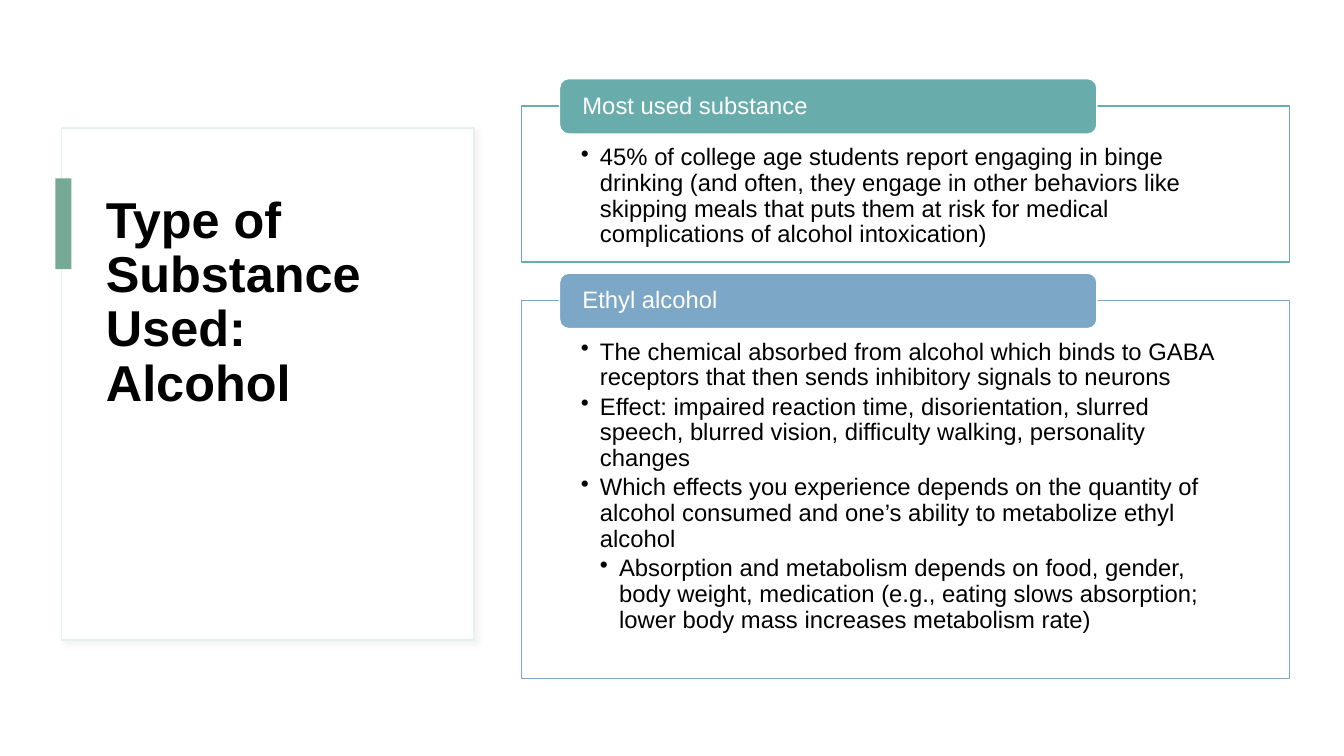
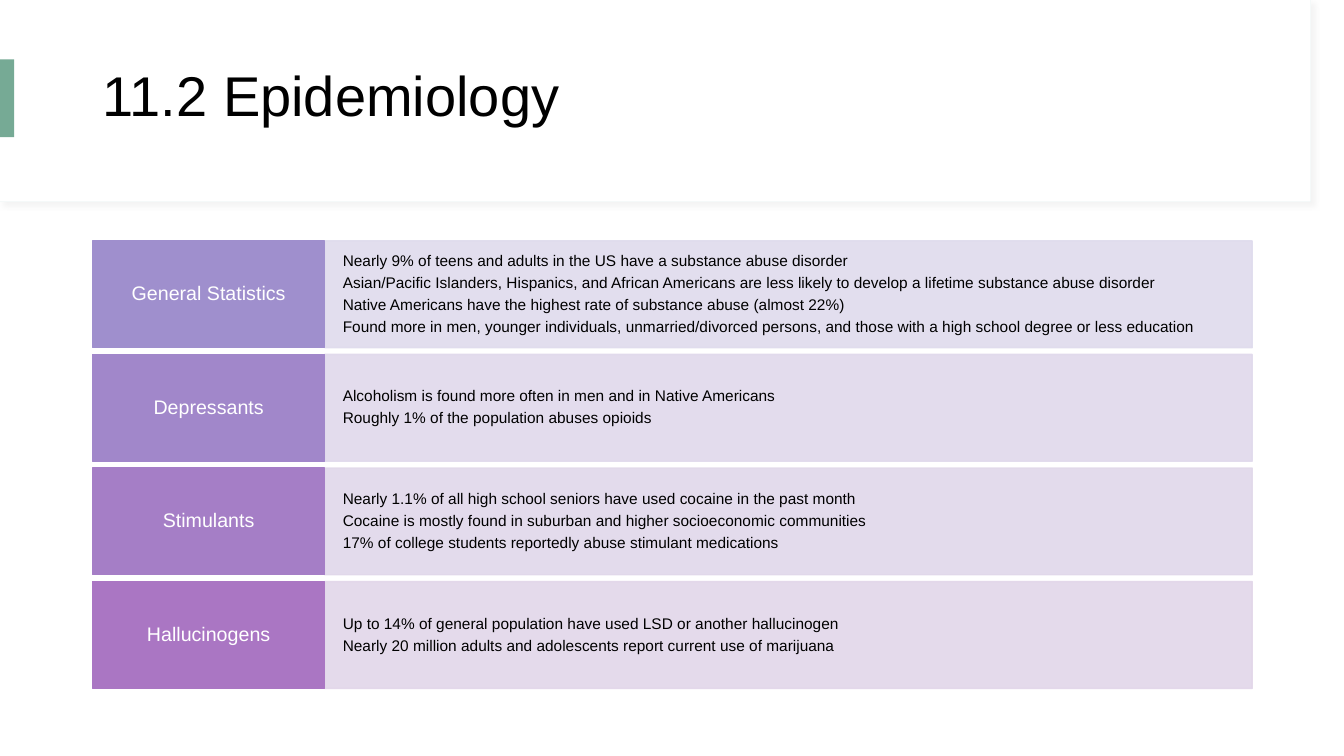
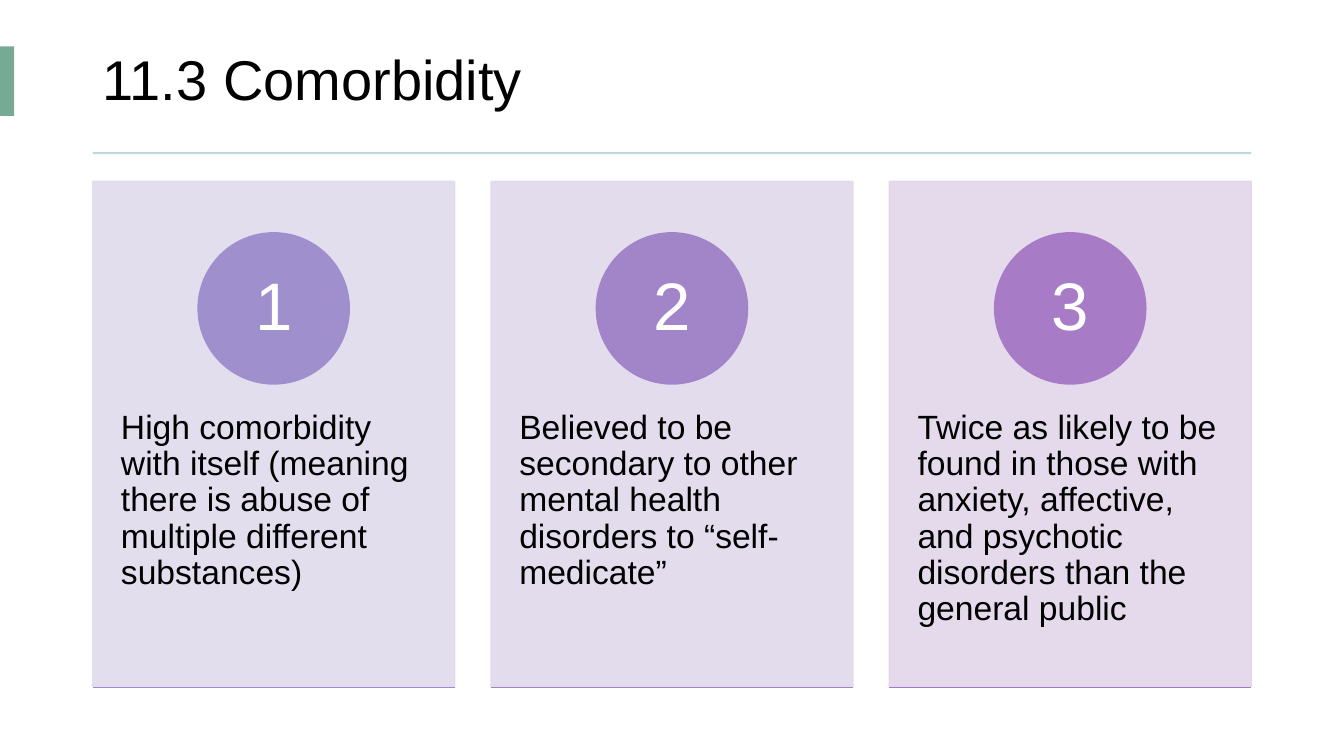
from pptx import Presentation, util as u
from pptx.dml.color import RGBColor
from pptx.enum import shapes, text
from pptx.oxml import ns, xmlchemy as xc

WIDE, HIGH = 13.33, 7.5
FONT = "Arial"
WHITE = RGBColor(0xFF, 0xFF, 0xFF)
BLACK = RGBColor(0, 0, 0)
GREEN = RGBColor(0x76, 0xAA, 0x95)
PALE = RGBColor(0xE5, 0xF0, 0xF0)
RULE = RGBColor(0xBD, 0xD9, 0xDB)
TEAL = RGBColor(0x69, 0xAC, 0xAC)
BLUE = RGBColor(0x7D, 0xA7, 0xC6)
MAUVE = RGBColor(0xE2, 0xD6, 0xE9)
PLUM = RGBColor(0xAA, 0x76, 0xC3)
LILAC = RGBColor(0xDF, 0xDB, 0xED)
IRIS = RGBColor(0x9F, 0x8F, 0xCD)

RECT = shapes.MSO_SHAPE.RECTANGLE
ROUND = shapes.MSO_SHAPE.ROUNDED_RECTANGLE
OVAL = shapes.MSO_SHAPE.OVAL
LEFT, MID = text.PP_ALIGN.LEFT, text.PP_ALIGN.CENTER
TOP, CENTRE = text.MSO_ANCHOR.TOP, text.MSO_ANCHOR.MIDDLE

FACTS = [
    (1.05, 1.55, TEAL, "Most used substance", [
        (1, "45% of college age students report engaging in binge drinking (and often, they "
            "engage in other behaviors like skipping meals that puts them at risk for medical "
            "complications of alcohol intoxication)")]),
    (2.98, 3.75, BLUE, "Ethyl alcohol", [
        (1, "The chemical absorbed from alcohol which binds to GABA receptors that then sends "
            "inhibitory signals to neurons"),
        (1, "Effect: impaired reaction time, disorientation, slurred speech, blurred vision, "
            "difficulty walking, personality changes"),
        (1, "Which effects you experience depends on the quantity of alcohol consumed and "
            "one’s ability to metabolize ethyl alcohol"),
        (2, "Absorption and metabolism depends on food, gender, body weight, medication (e.g., "
            "eating slows absorption; lower body mass increases metabolism rate)")]),
]
ROWS = [
    ("General Statistics", IRIS, LILAC, [
        "Nearly 9% of teens and adults in the US have a substance abuse disorder",
        "Asian/Pacific Islanders, Hispanics, and African Americans are less likely to develop "
        "a lifetime substance abuse disorder",
        "Native Americans have the highest rate of substance abuse (almost 22%)",
        "Found more in men, younger individuals, unmarried/divorced persons, and those with a "
        "high school degree or less education"]),
    ("Depressants", RGBColor(0xA1, 0x87, 0xCA), RGBColor(0xE0, 0xD9, 0xEC), [
        "Alcoholism is found more often in men and in Native Americans",
        "Roughly 1% of the population abuses opioids"]),
    ("Stimulants", RGBColor(0xA5, 0x7E, 0xC6), RGBColor(0xE1, 0xD8, 0xEA), [
        "Nearly 1.1% of all high school seniors have used cocaine in the past month",
        "Cocaine is mostly found in suburban and higher socioeconomic communities",
        "17% of college students reportedly abuse stimulant medications"]),
    ("Hallucinogens", PLUM, MAUVE, [
        "Up to 14% of general population have used LSD or another hallucinogen",
        "Nearly 20 million adults and adolescents report current use of marijuana"]),
]
# Text, card tint, circle colour, base line colour
CARDS = [
    ("High comorbidity with itself (meaning there is abuse of multiple different substances)",
     LILAC, IRIS, RGBColor(0xA0, 0x8A, 0xCB)),
    ("Believed to be secondary to other mental health disorders to “self-medicate”",
     RGBColor(0xE0, 0xD9, 0xEB), RGBColor(0xA2, 0x85, 0xC9), RGBColor(0xA4, 0x80, 0xC7)),
    ("Twice as likely to be found in those with anxiety, affective, and psychotic disorders "
     "than the general public",
     MAUVE, RGBColor(0xA7, 0x7B, 0xC5), PLUM),
]


def add(root, tag, **attrs):
    """Append an XML child and return it."""
    node = xc.OxmlElement(tag)
    for key, val in attrs.items():
        node.set(key, str(val))
    root.append(node)
    return node


def paint(shape, fill, line=None, width=1, alpha=None):
    shape.shadow.inherit = False
    shape.fill.solid()
    shape.fill.fore_color.rgb = fill
    if line is None:
        shape.line.fill.background()
    else:
        shape.line.color.rgb = line
        shape.line.width = u.Pt(width)
    if alpha:
        for clr in shape.element.iter(ns.qn("a:srgbClr")):
            add(clr, "a:alpha", val=alpha * 1000)


def shade(shape):
    """Give the shape a soft grey shadow to the lower right."""
    root = shape.element.spPr.find(ns.qn("a:effectLst"))
    cast = add(root, "a:outerShdw", blurRad=u.Pt(4), dist=u.Pt(3), dir=45 * 60000,
               algn="tl", rotWithShape=0)
    add(add(cast, "a:srgbClr", val="D9D9D9"), "a:alpha", val=30000)


def box(slide, kind, area, fill, line=None, alpha=None):
    shape = slide.shapes.add_shape(kind, *map(u.Inches, area))
    paint(shape, fill, line, alpha=alpha)
    return shape


def write(shape, lines, size, color=BLACK, pad=(0.1, 0.05), top=None, align=LEFT,
          anchor=CENTRE, after=0.35, bold=False):
    """Fill a shape with paragraphs; after is the gap as a share of the text size."""
    frame = shape.text_frame
    frame.text = "\n".join(lines)
    frame.word_wrap = True
    frame.auto_size = text.MSO_AUTO_SIZE.NONE
    frame.vertical_anchor = anchor
    frame.margin_left = frame.margin_right = u.Inches(pad[0])
    frame.margin_bottom = u.Inches(pad[1])
    frame.margin_top = u.Inches(pad[1] if top is None else top)
    for para in frame.paragraphs:
        para.alignment = align
        para.line_spacing = 0.9
        para.space_after = u.Pt(size * after)
        for run in para.runs:
            run.font.name = FONT
            run.font.size = u.Pt(size)
            run.font.bold = bold
            run.font.color.rgb = color


def bullet(para, level):
    props = para._p.get_or_add_pPr()
    props.set("marL", str(u.Inches(0.19 * level)))
    props.set("indent", str(u.Inches(-0.19)))
    add(props, "a:buChar", char="•")


def head(slide, words, area, tab, size=40, anchor=CENTRE, bold=False):
    """Place the title in front of what is drawn so far, with its green tab."""
    title = slide.shapes.title
    slide.shapes.element.append(title.element)
    title.left, title.top, title.width, title.height = map(u.Inches, area)
    write(title, [words], size, anchor=anchor, after=0, bold=bold)
    box(slide, RECT, tab, GREEN)


def bow(slide, low):
    """Draw a full-width band whose lower edge sags to low."""
    steps, sag, half = 48, 0.29, WIDE / 2
    edge = [(WIDE * i / steps, low - sag * (WIDE * i / steps / half - 1) ** 2)
            for i in range(steps, -1, -1)]
    pen = slide.shapes.build_freeform(0, 0, scale=u.Inches(1))
    pen.add_line_segments([(WIDE, 0)] + edge, close=True)
    return pen.convert_to_shape()


def base(slide, left, top, width, color):
    line = slide.shapes.add_connector(
        shapes.MSO_CONNECTOR.STRAIGHT,
        *map(u.Inches, (left, top, left + width, top)))
    line.line.color.rgb = color
    line.line.width = u.Pt(1)
    add(line.element.spPr, "a:effectLst")


def alcohol(slide):
    shade(box(slide, RECT, (0.61, 1.27, 4.09, 5.08), WHITE, PALE))
    head(slide, "Type of Substance Used: Alcohol", (0.95, 1.88, 3.39, 3.85),
         (0.55, 1.77, 0.16, 0.9), size=36, anchor=TOP, bold=True)
    for top, height, color, label, points in FACTS:
        panel = box(slide, RECT, (5.17, top, 7.62, height), WHITE, color)
        write(panel, [words for _, words in points], 17, pad=(0.59, 0.13), top=0.39,
              anchor=TOP, after=0.15)
        for para, (level, _) in zip(panel.text_frame.paragraphs, points):
            bullet(para, level)
        tag = box(slide, ROUND, (5.55, top - 0.27, 5.33, 0.55), color, WHITE)
        write(tag, [label], 17, WHITE, pad=(0.2, 0))


def figures(slide):
    paint(band := bow(slide, 2.08), WHITE, PALE, 0.75)
    shade(band)
    paint(bow(slide, 2.07), WHITE)
    head(slide, "11.2 Epidemiology", (0.92, 0.28, 11.5, 1.39), (0, 0.59, 0.14, 0.77))
    first, last, height = 2.39, 5.77, 1.06
    pitch = (last - first) / (len(ROWS) - 1)
    for i, (label, color, tint, lines) in enumerate(ROWS):
        top = first + i * pitch
        body = box(slide, RECT, (3.22, top, 9.2, height), tint, tint, 90)
        write(body, lines, 11, pad=(0.18, 0.27))
        side = box(slide, RECT, (0.92, top, 2.3, height), color, color)
        write(side, [label], 14, WHITE, pad=(0.12, 0.1), align=MID)


def illness(slide):
    head(slide, "11.3 Comorbidity", (0.92, 0.27, 11.49, 1.1), (0, 0.46, 0.14, 0.69))
    box(slide, RECT, (0.92, 1.51, 11.49, 0.02), RULE)
    width, pitch, top, height, disc = 3.59, 3.95, 1.8, 5.01, 1.5
    for i, (words, tint, color, edge) in enumerate(CARDS):
        left = 0.92 + i * pitch
        card = box(slide, RECT, (left, top, width, height), tint, tint, 90)
        write(card, [words], 24, pad=(0.28, 0.36), top=2.27, anchor=TOP)
        dot = box(slide, OVAL, (left + (width - disc) / 2, 2.31, disc, disc), color, color)
        write(dot, [str(i + 1)], 48, WHITE, pad=(0.12, 0.01), align=MID)
        base(slide, left, 6.82, width, edge)


def main():
    deck = Presentation()
    deck.slide_width, deck.slide_height = u.Inches(WIDE), u.Inches(HIGH)
    for draw in (alcohol, figures, illness):
        draw(deck.slides.add_slide(deck.slide_layouts[5]))
    deck.save("out.pptx")


if __name__ == "__main__":
    main()
